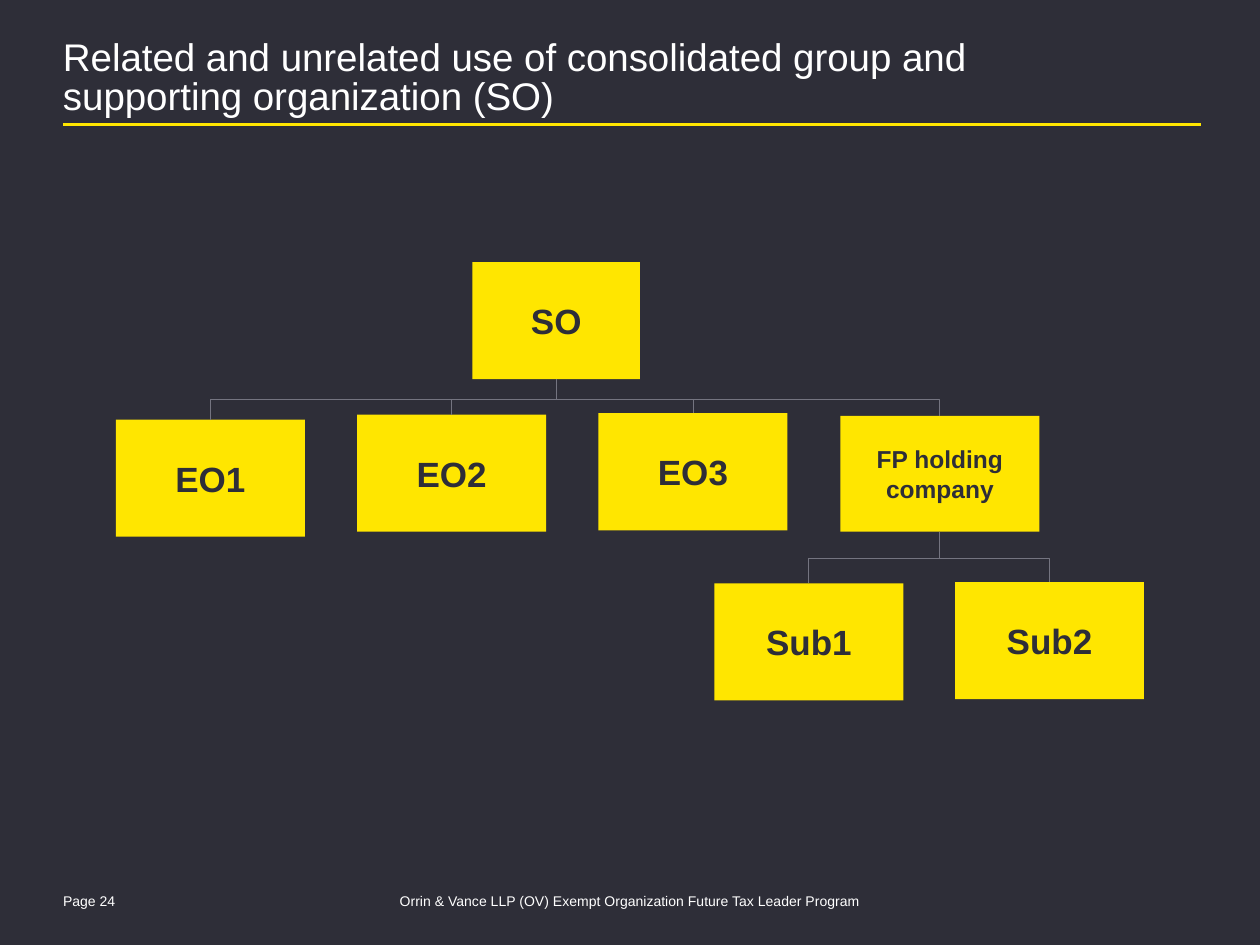
from dataclasses import dataclass

from lxml import etree
from pptx import Presentation
from pptx.dml.color import RGBColor
from pptx.enum.shapes import MSO_CONNECTOR, MSO_SHAPE
from pptx.enum.text import MSO_ANCHOR, PP_ALIGN
from pptx.oxml.ns import qn
from pptx.util import Inches, Pt

RECTANGLE = MSO_SHAPE.RECTANGLE
STRAIGHT, ELBOW = MSO_CONNECTOR.STRAIGHT, MSO_CONNECTOR.ELBOW
LEFT, CENTER = PP_ALIGN.LEFT, PP_ALIGN.CENTER
TOP, MIDDLE = MSO_ANCHOR.TOP, MSO_ANCHOR.MIDDLE
BOTTOM_SIDE, TOP_SIDE = 2, 0

DARK, YELLOW, GRAY, WHITE = "2E2E38", "FFE600", "747480", "FFFFFF"
FONT = "Arial"


@dataclass
class Entity:
    name: str
    left: float
    top: float
    width: float = 1.5
    height: float = 0.93
    size: int = 20


@dataclass
class Branch:
    parent: str
    children: list[str]
    bus_top: float


@dataclass
class Label:
    text: str
    left: float
    top: float
    width: float
    height: float
    size: int
    align: PP_ALIGN = LEFT
    inset_top: float = 0
    space_after: int = 0


COLUMN_LEFT, COLUMN_STEP = 0.92, 1.915
ENTITIES = [
    Entity("SO", 3.75, 2.08, width=1.33),
    *(Entity(f"EO{index + 1}", COLUMN_LEFT + index * COLUMN_STEP, top)
      for index, top in enumerate([3.33, 3.29, 3.28])),
    Entity("FP holding company", 6.67, 3.3, 1.58, 0.92, 14),
    Entity("Sub1", 5.67, 4.63),
    Entity("Sub2", 7.58, 4.62),
]
BRANCHES = [
    Branch("SO", ["EO1", "EO2", "EO3", "FP holding company"], 3.17),
    Branch("FP holding company", ["Sub1", "Sub2"], 4.43),
]
LABELS = [
    Label("Page 24", 0.5, 7.06, 1.31, 0.15, 8, LEFT, 0.04, 6),
    Label("Orrin & Vance LLP (OV) Exempt Organization Future Tax Leader Program",
          2.79, 7.06, 4.42, 0.15, 8, CENTER, 0.04, 6),
    Label("Related and unrelated use of consolidated group and\v"
          "supporting organization (SO)", 0.5, 0.32, 9, 0.65, 22),
]


def color(value: str) -> RGBColor:
    return RGBColor.from_string(value)


def style_font(font, size: int, fill: str, bold: bool = False) -> None:
    font.name, font.size, font.bold = FONT, Pt(size), bold
    font.color.rgb = color(fill)


def style_line(connector, stroke: str, width: float) -> None:
    connector.line.color.rgb = color(stroke)
    connector.line.width = Pt(width)
    etree.SubElement(connector._element.spPr, qn("a:effectLst"))


def add_label(slide, label: Label) -> None:
    box = slide.shapes.add_textbox(Inches(label.left), Inches(label.top),
                                   Inches(label.width), Inches(label.height))
    frame = box.text_frame
    frame.word_wrap = True
    frame.vertical_anchor = TOP
    frame.margin_left = frame.margin_right = frame.margin_bottom = 0
    frame.margin_top = Inches(label.inset_top)
    frame.text = label.text
    paragraph = frame.paragraphs[0]
    paragraph.alignment = label.align
    paragraph.line_spacing = 0.85
    paragraph.space_after = Pt(label.space_after)
    style_font(paragraph.font, label.size, WHITE)


def add_entity(slide, entity: Entity):
    shape = slide.shapes.add_shape(
        RECTANGLE, Inches(entity.left), Inches(entity.top),
        Inches(entity.width), Inches(entity.height))
    shape.shadow.inherit = False
    shape.fill.solid()
    shape.fill.fore_color.rgb = color(YELLOW)
    shape.line.fill.background()
    frame = shape.text_frame
    frame.word_wrap = True
    frame.vertical_anchor = MIDDLE
    frame.text = entity.name
    paragraph = frame.paragraphs[0]
    paragraph.alignment = CENTER
    style_font(paragraph.font, entity.size, DARK, bold=True)
    return shape


def add_elbow(slide, parent, child, bus_top: float) -> None:
    """Join parent to child downwards, turning at the height of the bus."""
    start_x, start_y = parent.left + parent.width // 2, parent.top + parent.height
    end_x, end_y = child.left + child.width // 2, child.top
    connector = slide.shapes.add_connector(ELBOW, start_x, start_y, end_x, end_y)
    connector.begin_connect(parent, BOTTOM_SIDE)
    connector.end_connect(child, TOP_SIDE)

    # An elbow leaves sideways by default, so its frame is turned on its centre.
    drop, run = end_y - start_y, abs(end_x - start_x)
    connector.left = (start_x + end_x - drop) // 2
    connector.top = (start_y + end_y - run) // 2
    connector.width, connector.height = drop, run
    goes_right = end_x > start_x
    properties = connector._element.spPr
    transform = properties.find(qn("a:xfrm"))
    transform.set("rot", str((270 if goes_right else 90) * 60000))
    transform.set("flipH", str(int(goes_right)))
    transform.set("flipV", "0")

    turn = round((Inches(bus_top) - start_y) / drop * 100000)
    adjustments = properties.find(qn("a:prstGeom")).find(qn("a:avLst"))
    etree.SubElement(adjustments, qn("a:gd"), name="adj1", fmla=f"val {turn}")
    style_line(connector, GRAY, 0.5)


def main() -> None:
    presentation = Presentation()
    presentation.slide_width, presentation.slide_height = Inches(10), Inches(7.5)
    slide = presentation.slides.add_slide(presentation.slide_layouts[6])
    slide.background.fill.solid()
    slide.background.fill.fore_color.rgb = color(DARK)

    title_rule = slide.shapes.add_connector(
        STRAIGHT, Inches(0.5), Inches(0.99), Inches(9.53), Inches(0.99))
    style_line(title_rule, YELLOW, 1.5)
    for label in LABELS:
        add_label(slide, label)

    shapes = {entity.name: add_entity(slide, entity) for entity in ENTITIES}
    for branch in BRANCHES:
        for child in branch.children:
            add_elbow(slide, shapes[branch.parent], shapes[child], branch.bus_top)

    presentation.save("out.pptx")


if __name__ == "__main__":
    main()
